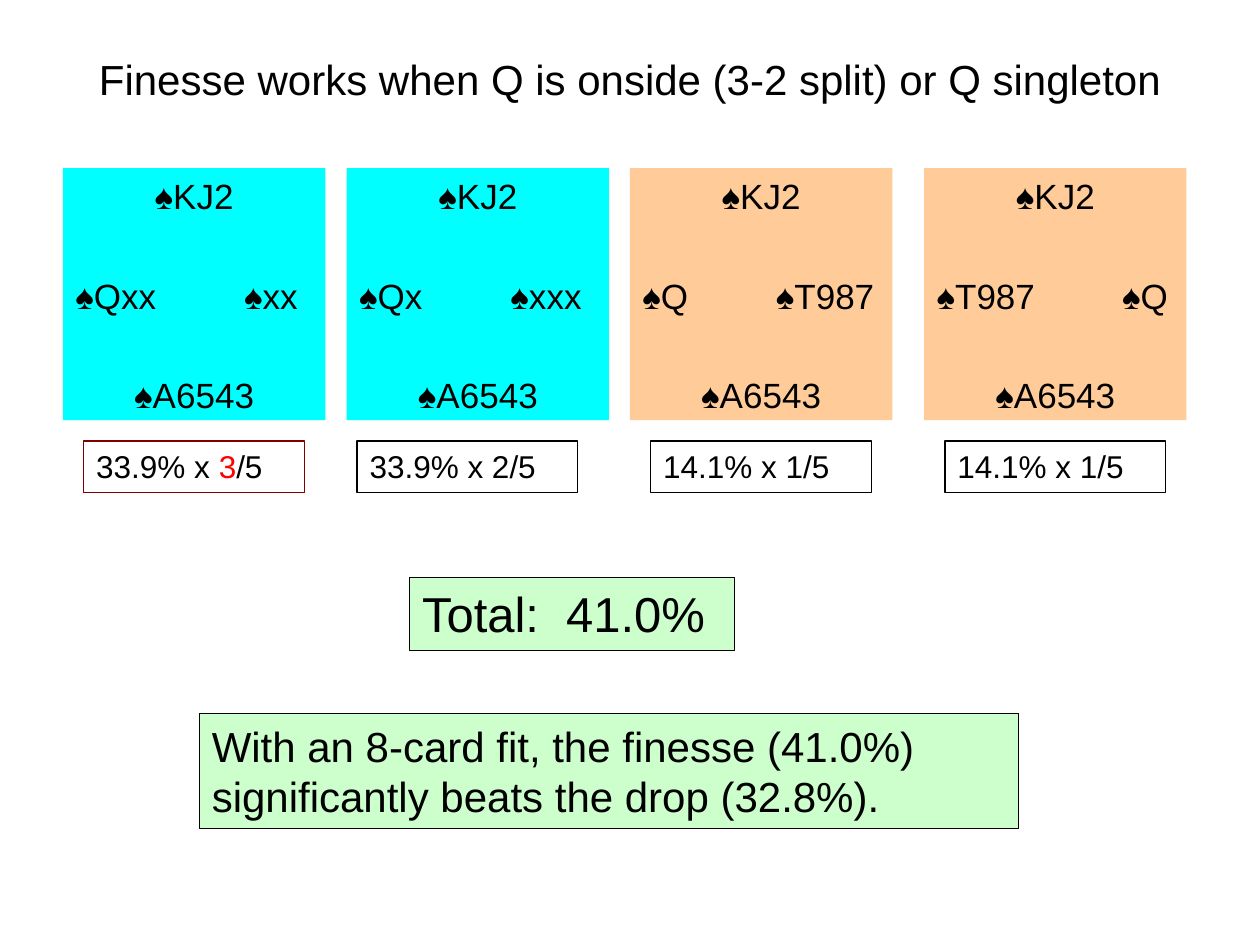
from pptx import Presentation, util as u
from pptx.dml.color import RGBColor
from pptx.enum import shapes, text
from lxml import etree

Cm, Pt = u.Cm, u.Pt
HUES = {"black": "000000", "red": "FF0000", "maroon": "800000",
        "cyan": "00FFFF", "peach": "FFCC99", "green": "CCFFCC"}
MID = text.PP_ALIGN.CENTER
LEFT = text.PP_ALIGN.LEFT

# left edge, fill, west, east, tab to east, odds, odds offset, odds line
DEALS = [
    (1.27, "cyan", "♠Qxx", "♠xx", 3.4, [("33.9% x ", "black"), ("3", "red"), ("/5", "black")], 0.42, "maroon"),
    (6.99, "cyan", "♠Qx", "♠xxx", 3.05, [("33.9% x 2/5", "black")], 0.21, "black"),
    (12.7, "peach", "♠Q", "♠T987", 2.69, [("14.1% x 1/5", "black")], 0.42, "black"),
    (18.63, "peach", "♠T987", "♠Q", 3.74, [("14.1% x 1/5", "black")], 0.42, "black"),
]


def hue(name):
    return RGBColor.from_string(HUES[name])


def panel(slide, box, fill=None, line=None):
    """Add a plain rectangle with top-anchored, wrapped text."""
    rect = slide.shapes.add_shape(shapes.MSO_SHAPE.RECTANGLE, *map(Cm, box))
    rect.shadow.inherit = False
    if fill:
        rect.fill.solid()
        rect.fill.fore_color.rgb = hue(fill)
    else:
        rect.fill.background()
    if line:
        rect.line.color.rgb = hue(line)
        rect.line.width = Pt(0.75)
    else:
        rect.line.fill.background()
    frame = rect.text_frame
    frame.word_wrap = True
    frame.vertical_anchor = text.MSO_ANCHOR.TOP
    return frame


def write(para, runs, size, align=LEFT, gap=0):
    para.alignment = align
    para.space_before = Pt(gap)
    for words, tone in runs:
        run = para.add_run()
        run.text = words
        run.font.name = "Arial"
        run.font.size = Pt(size)
        run.font.color.rgb = hue(tone)


def tab_at(para, where):
    props = para._p.get_or_add_pPr()
    tabs = etree.SubElement(props, props.tag.replace("pPr", "tabLst"))
    etree.SubElement(tabs, props.tag.replace("pPr", "tab"), pos=str(Cm(where)), algn="l")


def title(slide, box):
    frame = slide.shapes.add_textbox(*map(Cm, box)).text_frame
    frame.word_wrap = True
    frame.vertical_anchor = text.MSO_ANCHOR.MIDDLE
    words = "Finesse works when Q is onside (3-2 split) or Q singleton"
    write(frame.paragraphs[0], [(words, "black")], 24, MID)


def deal(slide, box, fill, west, east, tab):
    """Show the four hands: north, west and east, south."""
    frame = panel(slide, box, fill)
    write(frame.paragraphs[0], [("♠KJ2", "black")], 20, MID, 2)
    sides = frame.add_paragraph()
    write(sides, [(west + "\t" + east, "black")], 20, gap=33)
    tab_at(sides, tab)
    write(frame.add_paragraph(), [("♠A6543", "black")], 20, MID, 33)


def note(slide, box, runs, size, fill=None, line="black"):
    frame = panel(slide, box, fill, line)
    write(frame.paragraphs[0], runs, size, gap=2)


def main():
    deck = Presentation()
    deck.slide_width, deck.slide_height = Cm(25.4), Cm(19.05)
    slide = deck.slides.add_slide(deck.slide_layouts[6])
    title(slide, (1.27, 0.64, 22.86, 1.9))
    for left, fill, west, east, tab, odds, shift, line in DEALS:
        deal(slide, (left, 3.39, 5.29, 5.08), fill, west, east, tab)
        note(slide, (left + shift, 8.89, 4.45, 1.04), odds, 18, line=line)
    note(slide, (8.26, 11.64, 6.55, 1.47), [("Total:  41.0%", "black")], 28, "green")
    words = "With an 8-card fit, the finesse (41.0%) significantly beats the drop (32.8%)."
    note(slide, (4.02, 14.39, 16.51, 2.31), [(words, "black")], 24, "green")
    deck.save("out.pptx")


if __name__ == "__main__":
    main()
